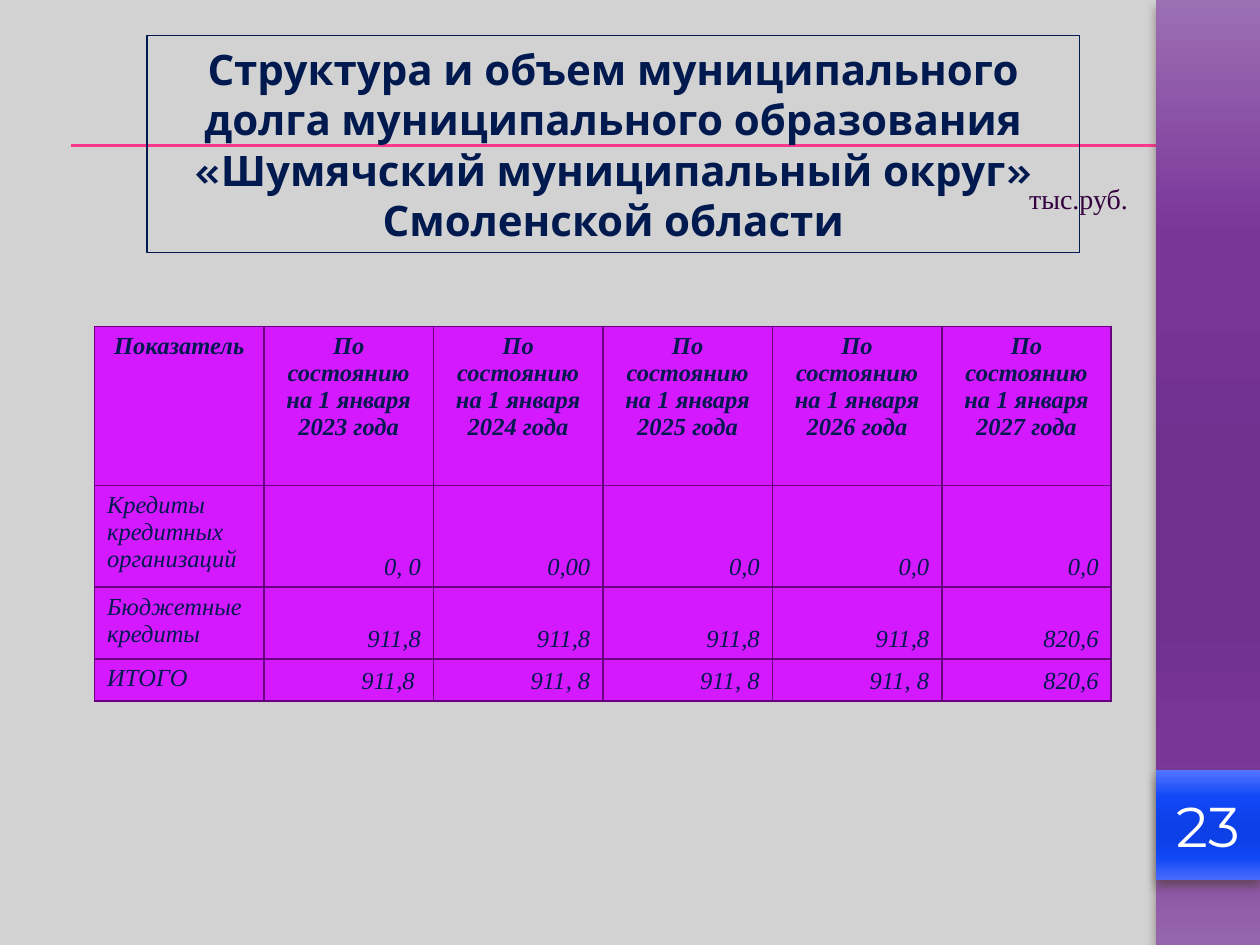
"""Builds the slide on the structure and volume of municipal debt."""
from dataclasses import dataclass

from lxml import etree
from pptx import Presentation
from pptx.dml.color import RGBColor
from pptx.enum import shapes, text
from pptx.oxml import parse_xml
from pptx.oxml.ns import nsdecls, qn
from pptx.util import Pt


@dataclass(frozen=True)
class Theme:
    """Colours, fonts and type sizes of the slide."""
    background: str = "D2D2D2"
    ink: str = "001A4F"
    rule: str = "FF388C"
    cell: str = "D519FF"
    border: str = "68007F"
    outline: str = "4E005F"
    unit: str = "340040"
    white: str = "FFFFFF"
    shadow: str = "4E3B30"
    side_stops: tuple = ("9C6FB3", "7A3599", "71308E", "71308E", "7A3598", "9566AD")
    number_stops: tuple = ("5374FF", "1147F8", "0E40E7", "0E40E7", "1147F6", "476AFD")
    stop_places: tuple = (0, 25, 50, 65, 80, 100)
    serif: str = "Times New Roman"
    title_font: str = "Karla"
    number_font: str = "Montserrat"
    title_size: int = 24
    number_size: int = 32
    table_size: int = 14
    unit_size: int = 16


THEME = Theme()
TITLE = ("Структура и объем муниципального долга муниципального образования "
         "«Шумячский муниципальный округ» Смоленской области")
YEARS = range(2023, 2028)
ROWS = [
    ["Показатель"] + [f"По состоянию на 1 января {year} года" for year in YEARS],
    ["Кредиты кредитных организаций", "0, 0", "0,00", "0,0", "0,0", "0,0"],
    ["Бюджетные кредиты", "911,8", "911,8", "911,8", "911,8", "820,6"],
    ["ИТОГО", "911,8 ", "911, 8", "911, 8", "911, 8", "820,6"],
]
ROW_HEIGHTS = (91, 58, 41, 24)
COLUMN_WIDTH = 96.85


def rgb(code):
    """Return the colour for a hex code."""
    return RGBColor.from_string(code)


def add_run(frame, wording, font, size, color, align, bold=False, italic=False):
    """Add a formatted run to the first paragraph of a frame."""
    paragraph = frame.paragraphs[0]
    paragraph.alignment = align
    run = paragraph.add_run()
    run.text = wording
    run.font.name = font
    run.font.size = Pt(size)
    run.font.bold = bold
    run.font.italic = italic
    run.font.color.rgb = rgb(color)
    return run


def add_rule(slide, top):
    """Draw a thin horizontal rule from the left margin to the slide edge."""
    rule = slide.shapes.add_connector(
        shapes.MSO_CONNECTOR.STRAIGHT, Pt(40.5), Pt(top), Pt(720), Pt(top))
    rule.line.color.rgb = rgb(THEME.rule)
    rule.line.width = Pt(0.75)
    etree.SubElement(rule._element.spPr, qn("a:effectLst"))


def add_band(slide, top, height, colors):
    """Draw a block of the right band with a vertical gradient and a shadow."""
    band = slide.shapes.add_shape(
        shapes.MSO_SHAPE.RECTANGLE, Pt(660.5), Pt(top), Pt(59.5), Pt(height))
    band.line.fill.background()
    stops = "".join(
        f'<a:gs pos="{place * 1000}"><a:srgbClr val="{color}"/></a:gs>'
        for place, color in zip(THEME.stop_places, colors))
    properties = band._element.spPr
    properties.find(qn("a:ln")).addprevious(parse_xml(
        f'<a:gradFill {nsdecls("a")} rotWithShape="1"><a:gsLst>{stops}</a:gsLst>'
        '<a:lin ang="5400000" scaled="0"/></a:gradFill>'))
    properties.append(parse_xml(
        f'<a:effectLst {nsdecls("a")}><a:outerShdw blurRad="{Pt(6)}" '
        f'dist="{Pt(4)}" dir="5400000" rotWithShape="0">'
        f'<a:srgbClr val="{THEME.shadow}"><a:alpha val="60000"/></a:srgbClr>'
        '</a:outerShdw></a:effectLst>'))
    return band


def add_page_number(slide, number):
    """Place the page number on its blue block."""
    frame = add_band(slide, 440, 62.5, THEME.number_stops).text_frame
    frame.margin_left = frame.margin_right = 0
    frame.vertical_anchor = text.MSO_ANCHOR.MIDDLE
    add_run(frame, number, THEME.number_font, THEME.number_size, THEME.white,
            text.PP_ALIGN.CENTER)


def set_title(slide):
    """Frame, fill in and bring forward the title placeholder."""
    title = slide.shapes.title
    title.left, title.top, title.width, title.height = (
        Pt(84), Pt(20.5), Pt(533), Pt(124))
    title.line.color.rgb = rgb(THEME.ink)
    title.line.width = Pt(0.75)
    frame = title.text_frame
    frame.word_wrap = True
    frame.auto_size = text.MSO_AUTO_SIZE.SHAPE_TO_FIT_TEXT
    run = add_run(frame, TITLE, THEME.title_font, THEME.title_size, THEME.ink,
                  text.PP_ALIGN.CENTER, bold=True)
    run.font._element.insert(0, parse_xml(
        f'<a:ln {nsdecls("a")} w="{Pt(0.75)}"><a:solidFill>'
        f'<a:srgbClr val="{THEME.outline}"/></a:solidFill></a:ln>'))
    slide.shapes._spTree.append(title._element)


def format_cell(cell, wording, is_header, is_label):
    """Fill, border and write one table cell."""
    properties = cell._tc.get_or_add_tcPr()
    for side in ("lnL", "lnR", "lnT", "lnB"):
        properties.append(parse_xml(
            f'<a:{side} {nsdecls("a")} w="{Pt(1)}"><a:solidFill>'
            f'<a:srgbClr val="{THEME.border}"/></a:solidFill></a:{side}>'))
    cell.fill.solid()
    cell.fill.fore_color.rgb = rgb(THEME.cell)
    align = text.PP_ALIGN.RIGHT
    if is_header:
        align = text.PP_ALIGN.CENTER
    elif is_label:
        align = text.PP_ALIGN.LEFT
    else:
        cell.vertical_anchor = text.MSO_ANCHOR.BOTTOM
    add_run(cell.text_frame, wording, THEME.serif, THEME.table_size, THEME.ink,
            align, bold=is_header, italic=True)


def add_debt_table(slide):
    """Add the table of debt by kind and date."""
    columns = len(ROWS[0])
    debt = slide.shapes.add_table(
        len(ROWS), columns, Pt(54), Pt(186.5),
        Pt(COLUMN_WIDTH * columns), Pt(sum(ROW_HEIGHTS))).table
    debt.first_row = debt.horz_banding = False
    for column in debt.columns:
        column.width = Pt(COLUMN_WIDTH)
    for r, (values, height) in enumerate(zip(ROWS, ROW_HEIGHTS)):
        debt.rows[r].height = Pt(height)
        for c, wording in enumerate(values):
            format_cell(debt.cell(r, c), wording, r == 0, c == 0)


def add_unit(slide):
    """Add the unit of measurement above the table."""
    frame = slide.shapes.add_textbox(Pt(581), Pt(100), Pt(73.5), Pt(26.5)).text_frame
    frame.word_wrap = True
    frame.auto_size = text.MSO_AUTO_SIZE.SHAPE_TO_FIT_TEXT
    add_run(frame, "тыс.руб.", THEME.serif, THEME.unit_size, THEME.unit,
            text.PP_ALIGN.LEFT)


def main():
    """Build and save the slide."""
    deck = Presentation()
    deck.slide_width, deck.slide_height = Pt(720), Pt(540)
    slide = deck.slides.add_slide(deck.slide_layouts[5])
    slide.background.fill.solid()
    slide.background.fill.fore_color.rgb = rgb(THEME.background)
    for top in (82.8, 83.5):
        add_rule(slide, top)
    add_band(slide, 0, 540, THEME.side_stops)
    add_page_number(slide, "23")
    set_title(slide)
    add_debt_table(slide)
    add_unit(slide)
    deck.save("out.pptx")


if __name__ == "__main__":
    main()
